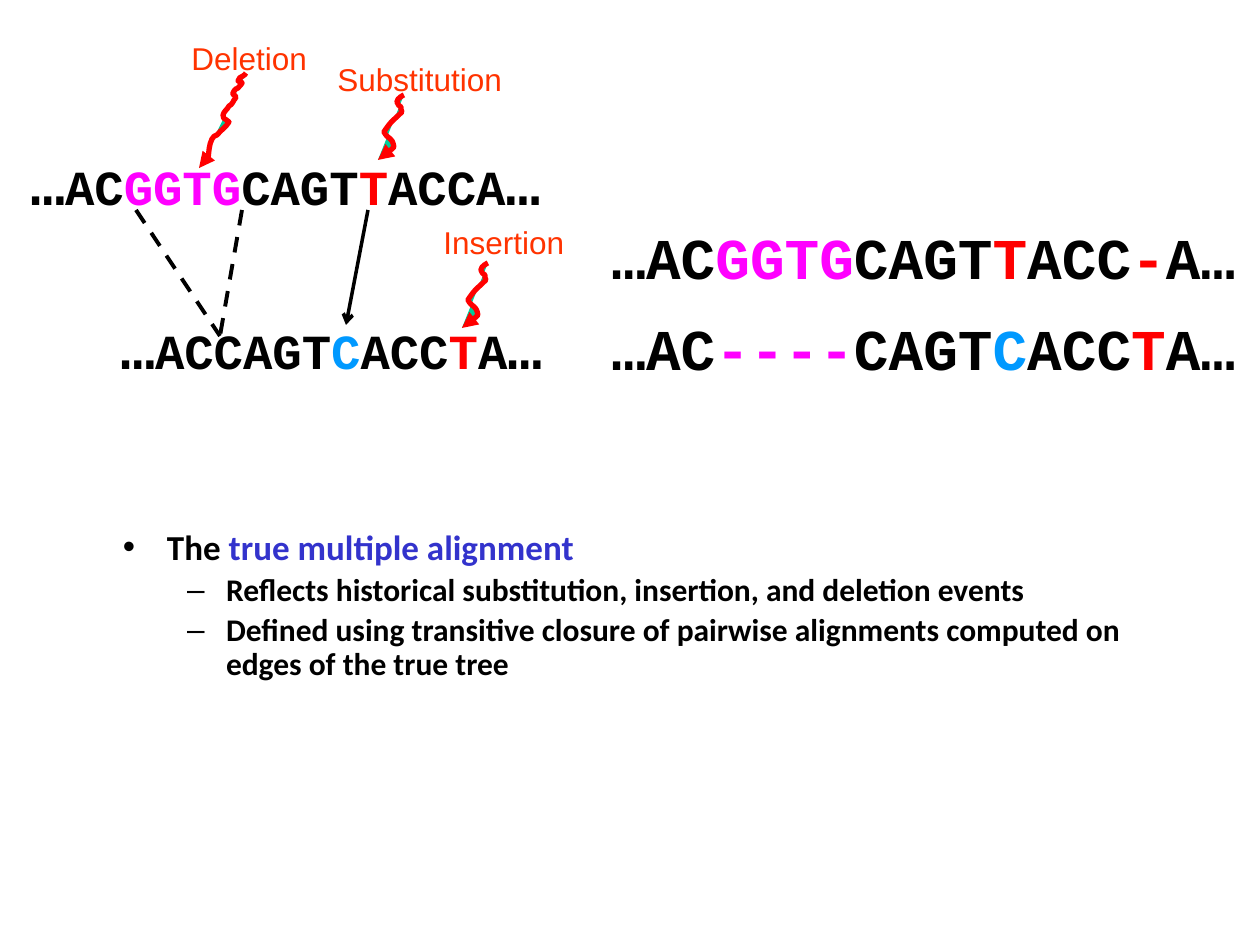
import pptx
import pptx.dml.color
import pptx.enum.dml
import pptx.enum.shapes
import pptx.enum.text
import pptx.oxml.ns
import pptx.util
from lxml import etree

RGBColor = pptx.dml.color.RGBColor
BLACK = RGBColor(0x00, 0x00, 0x00)
RED = RGBColor(0xFF, 0x00, 0x00)
MAGENTA = RGBColor(0xFF, 0x00, 0xFF)
SKY = RGBColor(0x00, 0x99, 0xFF)
ORANGE = RGBColor(0xFF, 0x33, 0x00)
INDIGO = RGBColor(0x33, 0x33, 0xCC)
GREEN = RGBColor(0x00, 0xCC, 0x99)

PX = 914400 / 126
qn = pptx.oxml.ns.qn

# Squiggles: a start point, then three points for each Bezier curve
LONG_SQUIGGLE = [
    (199, 168),
    (200, 166), (202, 166), (203, 165), (205, 163), (208, 159), (208, 159),
    (209, 152), (209, 145), (212, 139), (213, 136), (215, 136), (217, 135),
    (221, 130), (226, 127), (229, 122), (223, 117), (224, 120), (223, 115),
    (224, 111), (227, 110), (229, 106), (232, 105), (234, 100), (234, 100),
    (234, 100), (236, 98), (236, 97), (234, 93), (231, 96), (234, 91),
    (234, 89), (237, 89), (238, 88), (243, 82), (244, 83), (238, 81),
    (241, 76), (238, 79), (243, 76), (244, 76), (246, 73), (246, 73),
]
SHORT_SQUIGGLE = [
    (378, 160),
    (383, 156), (389, 152), (394, 147), (392, 136), (389, 141), (384, 132),
    (392, 120), (393, 121), (402, 112), (401, 111), (401, 108), (401, 107),
    (400, 106), (397, 105), (397, 102), (397, 98), (404, 95), (404, 95),
]


def emu(px):
    return pptx.util.Emu(round(px * PX))


def add_box(page, left, top, width, height, wrap=True):
    box = page.shapes.add_textbox(emu(left), emu(top), emu(width), emu(height))
    box.text_frame.word_wrap = wrap
    return box.text_frame


def style_para(para, font, size, bold, spacing, before=0):
    para.font.name = font
    para.font.size = pptx.util.Pt(size)
    para.font.bold = bold
    para.line_spacing = spacing
    para.space_before = pptx.util.Pt(before)


def add_spans(para, spans):
    """Add (text, colour) or (text, colour, size) spans."""
    for text, colour, *size in spans:
        span = para.add_run()
        span.text = text
        span.font.color.rgb = colour
        if size:
            span.font.size = pptx.util.Pt(size[0])


def add_sequence(page, left, top, width, spans, wrap):
    para = add_box(page, left, top, width, 78, wrap).paragraphs[0]
    style_para(para, "Courier New", 28, True, 0.94)
    add_spans(para, [("…", BLACK, 33), *spans, ("…", BLACK, 33)])


def add_alignment(page, left, top, width, height, rows):
    frame = add_box(page, left, top, width, height)
    for index, spans in enumerate(rows):
        para = frame.add_paragraph() if index else frame.paragraphs[0]
        style_para(para, "Courier New", 33, True, 0.94, 14.8)
        add_spans(para, spans)


def add_label(page, left, top, width, text):
    para = add_box(page, left, top, width, 48, False).paragraphs[0]
    style_para(para, "Arial", 18, False, 0.93)
    add_spans(para, [(text, ORANGE)])


def add_bullets(page, left, top, width, height, items):
    frame = add_box(page, left, top, width, height)
    frame.margin_left = frame.margin_right = 0
    frame.margin_top = frame.margin_bottom = 0
    for index, (level, spans) in enumerate(items):
        para = frame.add_paragraph() if index else frame.paragraphs[0]
        size, margin, hang, mark = [(20, 59, 44, "•"), (18, 118, 39, "–")][level]
        para.level = level
        style_para(para, "Calibri", size, True, 0.9, size * 0.2)
        properties = para._p.get_or_add_pPr()
        properties.set("marL", str(emu(margin)))
        properties.set("indent", str(-emu(hang)))
        bullet_font = etree.Element(qn("a:buFont"), typeface="Arial")
        bullet = etree.Element(qn("a:buChar"), char=mark)
        properties.find(qn("a:defRPr")).addprevious(bullet_font)
        bullet_font.addnext(bullet)
        add_spans(para, spans)


def add_arrowhead(line, end, kind):
    etree.SubElement(line._get_or_add_ln(), qn(end), type=kind)


def add_squiggle(page, points, shift_x=0, shift_y=0):
    points = [(x + shift_x, y + shift_y) for x, y in points]
    builder = page.shapes.build_freeform(*points[0], scale=PX)
    builder.add_line_segments(points[1:], close=False)
    shape = builder.convert_to_shape()
    # Join each three straight segments into one Bezier curve
    segments = list(shape._element.iter(qn("a:lnTo")))
    for first in range(0, len(segments), 3):
        curve = etree.Element(qn("a:cubicBezTo"))
        segments[first].addprevious(curve)
        for segment in segments[first:first + 3]:
            curve.append(segment[0])
            segment.getparent().remove(segment)
    shape.shadow.inherit = False
    shape.fill.solid()
    shape.fill.fore_color.rgb = GREEN
    shape.line.color.rgb = RED
    shape.line.width = pptx.util.Pt(3)
    add_arrowhead(shape.line, "a:headEnd", "triangle")


def add_line(page, start, end, width, dashed=False, arrow=False):
    line = page.shapes.add_connector(
        pptx.enum.shapes.MSO_CONNECTOR.STRAIGHT, *map(emu, start + end))
    line.line.color.rgb = BLACK
    line.line.width = pptx.util.Pt(width)
    if dashed:
        line.line.dash_style = pptx.enum.dml.MSO_LINE.DASH
    if arrow:
        add_arrowhead(line.line, "a:tailEnd", "arrow")
    etree.SubElement(line._element.spPr, qn("a:effectLst"))


def main():
    deck = pptx.Presentation()
    deck.slide_width, deck.slide_height = emu(1260), emu(945)
    page = deck.slides.add_slide(deck.slide_layouts[6])

    # Aligned pair
    add_alignment(page, 599, 221, 661, 169, [
        [("…AC", BLACK), ("GGTG", MAGENTA), ("CAGT", BLACK), ("T", RED),
         ("ACC", BLACK), ("-", RED), ("A…", BLACK)],
        [("…AC", BLACK), ("----", MAGENTA), ("CAGT", BLACK), ("C", SKY),
         ("ACC", BLACK), ("T", RED), ("A…", BLACK)],
    ])

    # Definition
    add_bullets(page, 108, 530, 1014, 213, [
        (0, [("The ", BLACK), ("true multiple alignment", INDIGO)]),
        (1, [("Reflects historical substitution, insertion, "
              "and deletion events", BLACK)]),
        (1, [("Defined using transitive closure of pairwise alignments "
              "computed on edges of the true tree", BLACK)]),
    ])

    # Ancestor and descendant sequences
    add_sequence(page, 18, 147, 535, [
        ("AC", BLACK), ("GGTG", MAGENTA), ("CAGT", BLACK), ("T", RED),
        ("ACCA", BLACK)], wrap=False)
    add_sequence(page, 108, 311, 494, [
        ("ACCAGT", BLACK), ("C", SKY), ("ACC", BLACK), ("T", RED),
        ("A", BLACK)], wrap=True)

    # Links between the sequences
    add_line(page, (136, 210), (220, 336), 2.25, dashed=True)
    add_line(page, (242, 210), (220, 336), 2.25, dashed=True)
    add_line(page, (368, 210), (346, 325), 2, arrow=True)

    # Mutation events
    add_squiggle(page, LONG_SQUIGGLE)
    add_squiggle(page, SHORT_SQUIGGLE)
    add_squiggle(page, SHORT_SQUIGGLE, 84, 168)
    add_label(page, 179, 36, 141, "Deletion")
    add_label(page, 325, 57, 190, "Substitution")
    add_label(page, 431, 220, 146, "Insertion")

    deck.save("out.pptx")


if __name__ == "__main__":
    main()
